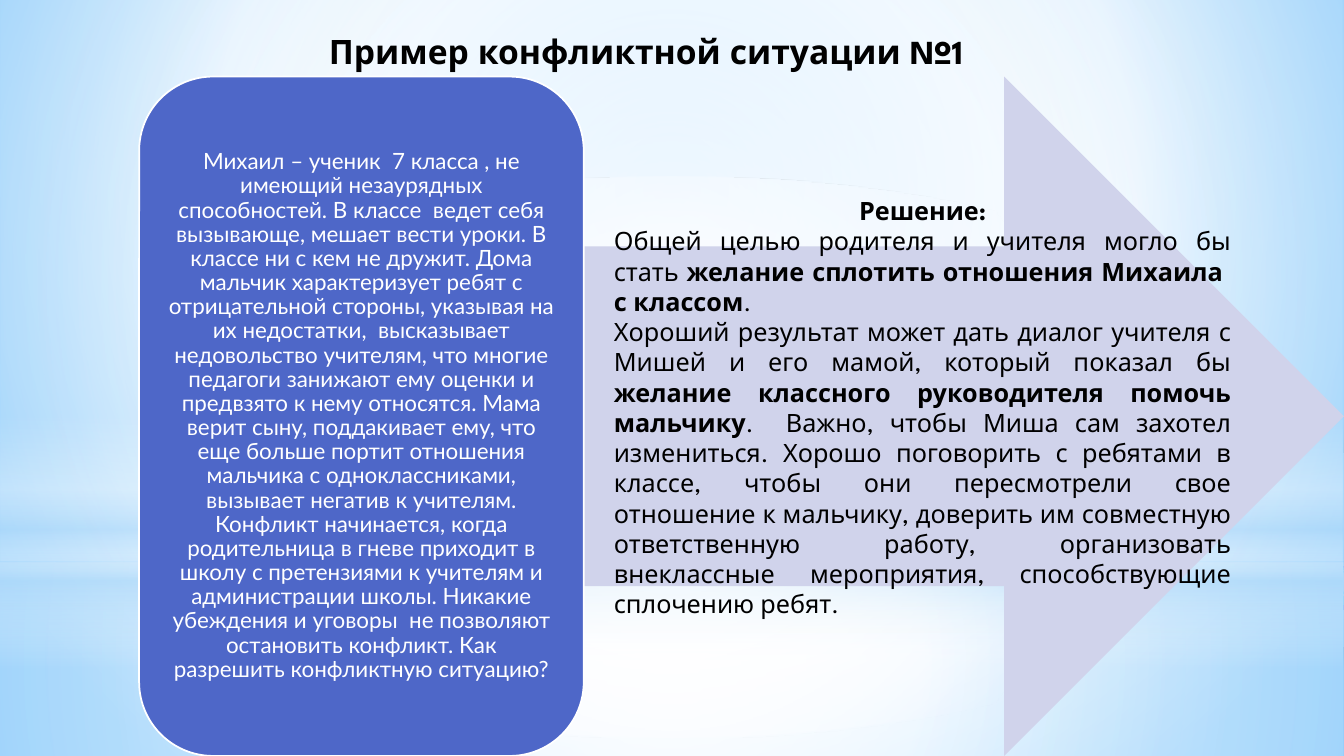
from lxml.etree import SubElement
from pptx import Presentation
from pptx.dml.color import RGBColor
from pptx.enum.shapes import MSO_SHAPE
from pptx.enum.text import MSO_ANCHOR, MSO_AUTO_SIZE, PP_ALIGN
from pptx.oxml.ns import qn
from pptx.util import Inches, Pt

WHITE = RGBColor(0xFF, 0xFF, 0xFF)
BLACK = RGBColor(0x00, 0x00, 0x00)
SKY = RGBColor(0x9E, 0xD5, 0xFF)
AZURE = RGBColor(0x5B, 0xB9, 0xFF)
MIST = RGBColor(0xB4, 0xDC, 0xFA)
LAVENDER = RGBColor(0xD0, 0xD3, 0xEB)
INDIGO = RGBColor(0x4E, 0x67, 0xC8)

HEADING = "Пример конфликтной ситуации №1"
SITUATION = (
    "Михаил – ученик  7 класса , не имеющий незаурядных способностей. "
    "В классе  ведет себя вызывающе, мешает вести уроки. В классе ни с кем не дружит. "
    "Дома мальчик характеризует ребят с отрицательной стороны, указывая на их недостатки,  "
    "высказывает недовольство учителям, что многие педагоги занижают ему оценки и "
    "предвзято к нему относятся. Мама верит сыну, поддакивает ему, что еще больше портит "
    "отношения мальчика с одноклассниками, вызывает негатив к учителям. Конфликт начинается, "
    "когда родительница в гневе приходит в школу с претензиями к учителям и администрации "
    "школы. Никакие убеждения и уговоры  не позволяют остановить конфликт. Как разрешить "
    "конфликтную ситуацию?"
)
COMMON_GOAL = [
    ("Общей целью родителя и учителя могло бы стать ", False),
    ("желание сплотить отношения Михаила  с классом", True),
    (".", False),
]
DIALOGUE = [
    ("Хороший результат может дать диалог учителя с Мишей и его мамой, "
     "который показал бы ", False),
    ("желание классного руководителя помочь мальчику", True),
    (".  Важно, чтобы Миша сам захотел измениться. Хорошо поговорить с ребятами в классе, "
     "чтобы они пересмотрели свое отношение к мальчику, доверить им совместную "
     "ответственную работу, организовать внеклассные мероприятия, способствующие "
     "сплочению ребят.", False),
]


def write(paragraph, text, size=18, font="League Spartan", color=BLACK, bold=False,
          align=PP_ALIGN.CENTER, spacing=None):
    paragraph.alignment = align
    paragraph.line_spacing = spacing
    run = paragraph.add_run()
    run.text = text
    run.font.size = Pt(size)
    run.font.name = font
    run.font.bold = bold
    run.font.color.rgb = color


def set_gradient(properties, stops, focus=None):
    solid = properties.find(qn("a:solidFill"))
    gradient = properties.makeelement(qn("a:gradFill"), {"rotWithShape": "1"})
    stop_list = SubElement(gradient, qn("a:gsLst"))
    for position, color, opacity in stops:
        stop = SubElement(stop_list, qn("a:gs"), pos=str(position * 1000))
        tint = SubElement(stop, qn("a:srgbClr"), val=str(color))
        if opacity < 100:
            SubElement(tint, qn("a:alpha"), val=str(opacity * 1000))
    if focus:
        circle = SubElement(gradient, qn("a:path"), {"path": "circle"})
        sides = {side: str(share * 1000) for side, share in zip("ltrb", focus)}
        SubElement(circle, qn("a:fillToRect"), sides)
    else:
        SubElement(gradient, qn("a:lin"), ang="5400000", scaled="0")
    properties.replace(solid, gradient)


def add_panel(slide, kind, left, top, width, height, color, outline=None):
    panel = slide.shapes.add_shape(
        kind, Inches(left), Inches(top), Inches(width), Inches(height))
    panel.shadow.inherit = False
    panel.fill.solid()
    panel.fill.fore_color.rgb = color
    if outline is None:
        panel.line.fill.background()
    else:
        panel.line.color.rgb = outline
        panel.line.width = Pt(1.25)
    return panel


def add_glow(slide, kind, top, height, stops, focus=None):
    glow = add_panel(slide, kind, 0, top, 13.33, height, WHITE)
    set_gradient(glow._element.spPr, stops, focus)


def add_backdrop(slide):
    center = (50, 50, 50, 50)
    slide.background.fill.solid()
    background = slide._element.cSld.find(".//" + qn("p:bgPr"))
    set_gradient(background, [(0, SKY, 100), (60, WHITE, 100), (100, AZURE, 100)],
                 (20, 10, 20, 60))
    add_glow(slide, MSO_SHAPE.RECTANGLE, 5.58, 1.92,
             [(0, WHITE, 91), (37, WHITE, 76), (100, MIST, 79)], center)
    add_glow(slide, MSO_SHAPE.RECTANGLE, 0, 5.58,
             [(0, WHITE, 89), (48, WHITE, 62), (100, MIST, 79)], center)
    add_glow(slide, MSO_SHAPE.RECTANGLE, 4.12, 2.5,
             [(0, WHITE, 0), (29, WHITE, 30), (45, MIST, 40),
              (55, WHITE, 26), (65, MIST, 60), (100, WHITE, 0)])
    add_glow(slide, MSO_SHAPE.OVAL, 1.75, 5.58,
             [(0, WHITE, 100), (56, WHITE, 0)], center)


def add_heading(slide):
    heading = slide.shapes.title
    heading.left, heading.top = Inches(2.82), Inches(0.26)
    heading.width, heading.height = Inches(7.17), Inches(0.5)
    frame = heading.text_frame
    frame.auto_size = MSO_AUTO_SIZE.NONE
    frame.vertical_anchor = MSO_ANCHOR.MIDDLE
    write(frame.paragraphs[0], HEADING, size=24, bold=True)
    slide.shapes._spTree.append(heading._element)


def add_situation(slide):
    card = add_panel(slide, MSO_SHAPE.ROUNDED_RECTANGLE, 1.38, 0.76, 4.41, 6.74,
                     INDIGO, outline=WHITE)
    frame = card.text_frame
    frame.word_wrap = True
    frame.vertical_anchor = MSO_ANCHOR.MIDDLE
    frame.margin_left = frame.margin_right = Inches(0.07)
    frame.margin_top = frame.margin_bottom = Inches(0.07)
    write(frame.paragraphs[0], SITUATION, size=16, font="Lato", color=WHITE, spacing=0.9)


def add_solution(slide):
    solution = slide.shapes.add_textbox(
        Inches(5.99), Inches(1.89), Inches(6.32), Inches(4.37))
    frame = solution.text_frame
    frame.word_wrap = True
    write(frame.paragraphs[0], "Решение:", bold=True)
    for pieces in (COMMON_GOAL, DIALOGUE):
        paragraph = frame.add_paragraph()
        for text, bold in pieces:
            write(paragraph, text, bold=bold, align=PP_ALIGN.JUSTIFY)


def main():
    deck = Presentation()
    deck.slide_width, deck.slide_height = Inches(13.33), Inches(7.5)
    slide = deck.slides.add_slide(deck.slide_layouts[5])
    add_backdrop(slide)
    add_panel(slide, MSO_SHAPE.RIGHT_ARROW, 2.03, 0.76, 11.3, 6.74, LAVENDER)
    add_situation(slide)
    add_heading(slide)
    add_solution(slide)
    deck.save("out.pptx")


if __name__ == "__main__":
    main()
